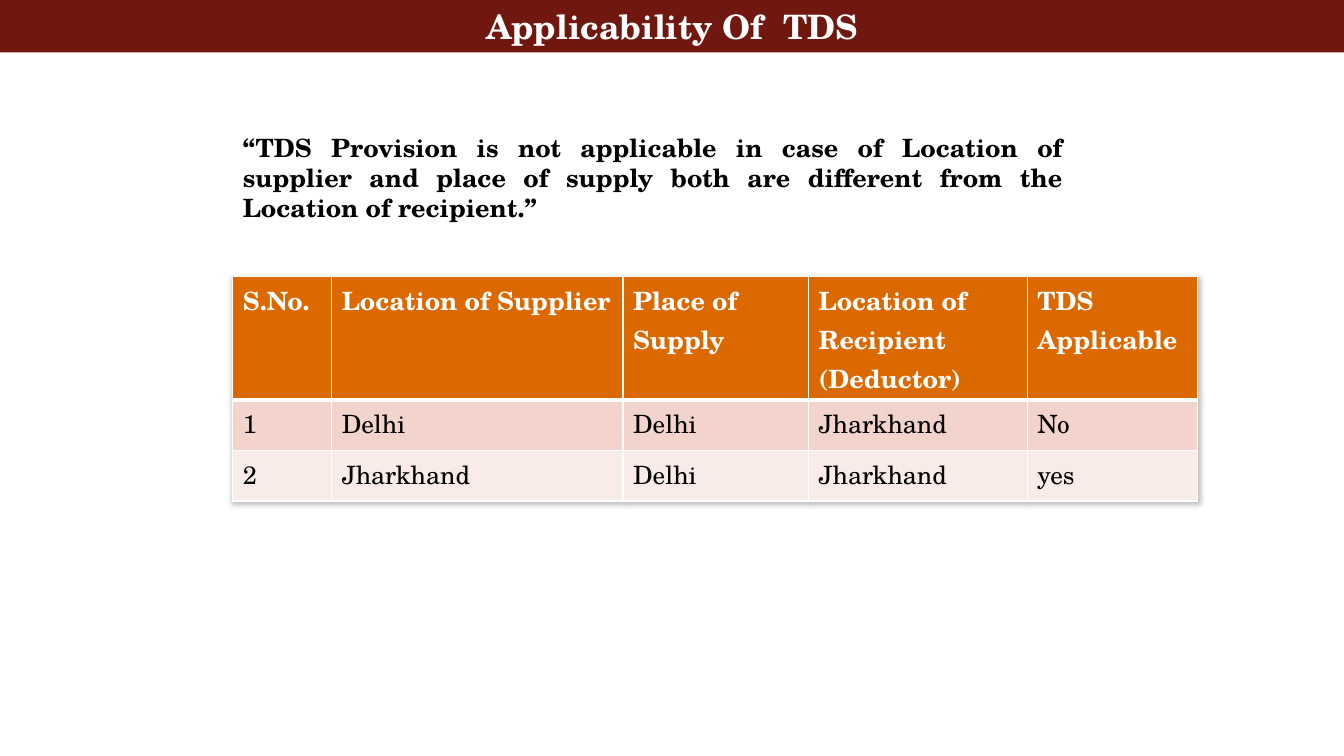
import pptx
import pptx.util
import pptx.oxml
import pptx.dml.color
import pptx.enum.text

INK = {"bar": "70180F", "head": "DC6900", "odd": "F2D4CC", "even": "F9EBE7",
       "white": "FFFFFF", "black": "000000"}
NS = 'xmlns:a="http://schemas.openxmlformats.org/drawingml/2006/main"'
ALIGN = pptx.enum.text.PP_ALIGN
FIT = pptx.enum.text.MSO_AUTO_SIZE
inch = pptx.util.Inches


def color(name):
    return pptx.dml.color.RGBColor.from_string(INK[name])


def style(frame, tone, size=18, bold=True, align=ALIGN.LEFT):
    look = {"name": "TeX Gyre Schola", "size": pptx.util.Pt(size), "bold": bold}
    for para in frame.paragraphs:
        para.alignment = align
        for run in para.runs:
            for key, value in look.items():
                setattr(run.font, key, value)
            run.font.color.rgb = color(tone)


deck = pptx.Presentation()
deck.slide_width, deck.slide_height = inch(13.33), inch(7.5)
slide = deck.slides.add_slide(deck.slide_layouts[5])
left = inch(2.31)

# Title bar
title = slide.shapes.title
title.left, title.top = 0, 0
title.width, title.height = deck.slide_width, inch(0.52)
title.fill.solid()
title.fill.fore_color.rgb = color("bar")
frame = title.text_frame
frame.text = "Applicability Of  TDS"
form = {"margin_left": 0, "margin_right": 0, "margin_top": inch(0.06),
        "margin_bottom": inch(0.06), "auto_size": FIT.NONE,
        "vertical_anchor": pptx.enum.text.MSO_ANCHOR.TOP}
for key, value in form.items():
    setattr(frame, key, value)
style(frame, "white", 24, align=ALIGN.CENTER)

# Rule in words
frame = slide.shapes.add_textbox(left, inch(1.26), inch(8.33), inch(1.01)).text_frame
frame.word_wrap = True
frame.auto_size = FIT.SHAPE_TO_FIT_TEXT
frame.text = ("“TDS Provision is not applicable in case of Location of supplier and "
              "place of supply both are different from the Location of recipient.”")
style(frame, "black", align=ALIGN.JUSTIFY)

# Table of cases
rows = [
    ["S.No.", "Location of Supplier", "Place of Supply",
     "Location of Recipient\n(Deductor)", "TDS Applicable"],
    ["1", "Delhi", "Delhi", "Jharkhand", "No"],
    ["2", "Jharkhand", "Delhi", "Jharkhand", "yes"],
]
wide = [0.98, 2.89, 1.84, 2.17, 1.69]
high = [1.23, 0.5, 0.5]
table = slide.shapes.add_table(len(rows), len(wide), left, inch(2.74),
                               inch(sum(wide)), inch(sum(high))).table
for col, size in zip(table.columns, wide):
    col.width = inch(size)
for row, size in zip(table.rows, high):
    row.height = inch(size)

for r, (words, fill) in enumerate(zip(rows, ["head", "odd", "even"])):
    for c, text in enumerate(words):
        cell = table.cell(r, c)
        cell.text = text
        style(cell.text_frame, "black" if r else "white", bold=r == 0)
        # White borders, heavier where the header meets the body
        lines = {"L": 1, "R": 1, "T": 3 if r == 1 else 1, "B": 1 if r else 3}
        for side, points in lines.items():
            cell._tc.get_or_add_tcPr().append(pptx.oxml.parse_xml(
                f'<a:ln{side} {NS} w="{pptx.util.Pt(points)}"><a:solidFill>'
                f'<a:srgbClr val="{INK["white"]}"/></a:solidFill></a:ln{side}>'))
        cell.fill.solid()
        cell.fill.fore_color.rgb = color(fill)

# Soft shadow under the table
table._tbl.tblPr.insert(0, pptx.oxml.parse_xml(
    f'<a:effectLst {NS}><a:outerShdw blurRad="50800" dist="12700" dir="5400000">'
    f'<a:srgbClr val="{INK["black"]}"><a:alpha val="25000"/></a:srgbClr>'
    '</a:outerShdw></a:effectLst>'))

deck.save("out.pptx")
